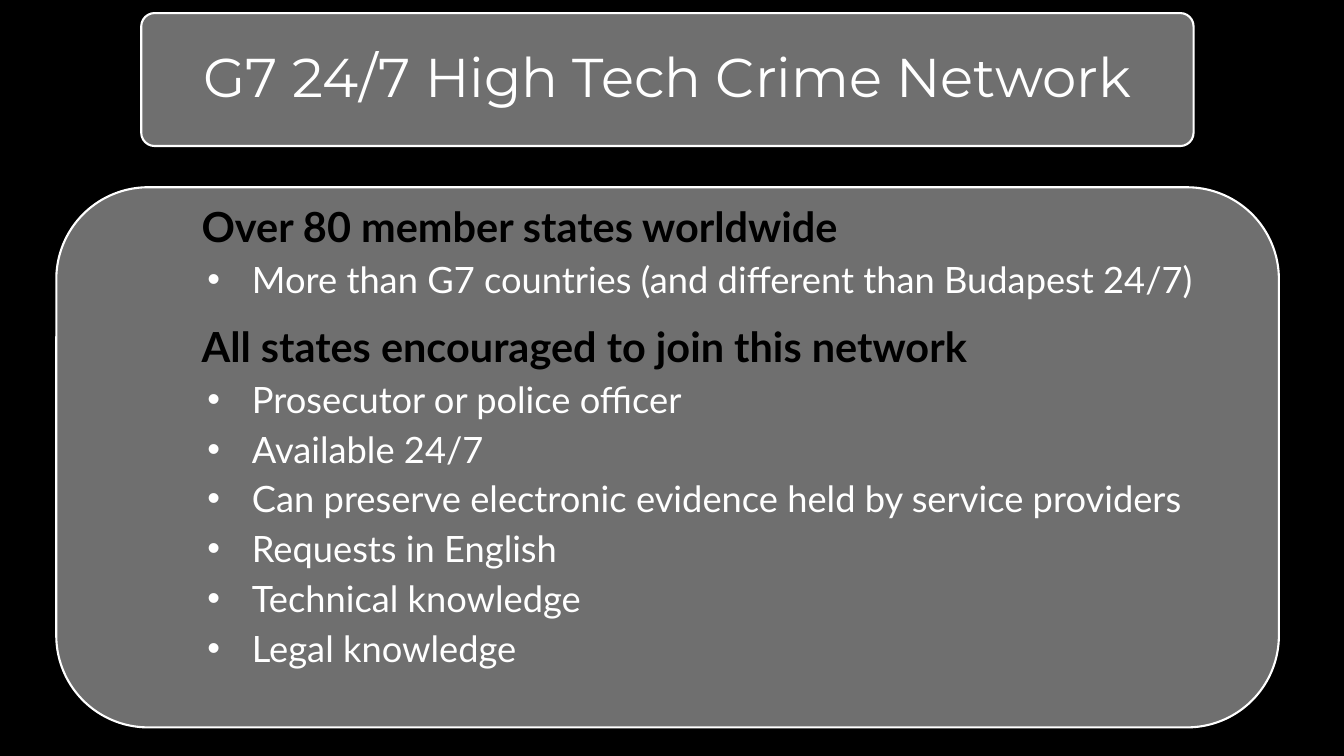
from lxml import etree
from pptx import Presentation
from pptx.dml.color import RGBColor
from pptx.enum.shapes import MSO_SHAPE
from pptx.enum.text import MSO_ANCHOR, PP_ALIGN
from pptx.oxml.ns import qn
from pptx.util import Cm, Pt

ROUNDED = MSO_SHAPE.ROUNDED_RECTANGLE
MIDDLE, TOP = MSO_ANCHOR.MIDDLE, MSO_ANCHOR.TOP
CENTER, LEFT = PP_ALIGN.CENTER, PP_ALIGN.LEFT

COLORS = {"background": "000000", "panel": "6F6F6F",
          "light": "FFFFFF", "heading": "000000"}

SECTIONS = [
    ("Over 80 member states worldwide",
     ["More than G7 countries (and different than Budapest 24/7)"]),
    ("All states encouraged to join this network",
     ["Prosecutor or police officer",
      "Available 24/7",
      "Can preserve electronic evidence held by service providers",
      "Requests in English",
      "Technical knowledge",
      "Legal knowledge"]),
]


def color(name):
    return RGBColor.from_string(COLORS[name])


def add_panel(page, left, top, width, height, corner):
    panel = page.shapes.add_shape(ROUNDED, Cm(left), Cm(top), Cm(width), Cm(height))
    panel.adjustments[0] = corner
    panel.shadow.inherit = False
    panel.fill.solid()
    panel.fill.fore_color.rgb = color("panel")
    panel.line.color.rgb = color("light")
    panel.line.width = Pt(1.5)
    return panel


def set_frame(box, anchor, side_margin):
    frame = box.text_frame
    frame.word_wrap = True
    frame.vertical_anchor = anchor
    frame.margin_left = frame.margin_right = Cm(side_margin)
    frame.margin_top = frame.margin_bottom = Cm(0.13)
    return frame


def write(para, text, *, font, size, tint, bold=False, align=LEFT, spacing=1.0, before=0):
    para.alignment = align
    para.line_spacing = spacing
    para.space_before = Pt(before)
    span = para.add_run()
    span.text = text
    span.font.name = font
    span.font.size = Pt(size)
    span.font.bold = bold
    span.font.color.rgb = color(tint)


def indent(para, left, hanging=0, bullet=None):
    """Set the left margin and, if given, a hanging bullet."""
    props = para._p.get_or_add_pPr()
    props.set("marL", str(Cm(left)))
    props.set("indent", str(-Cm(hanging)))
    if bullet:
        tint = etree.SubElement(props, qn("a:buClr"))
        etree.SubElement(tint, qn("a:srgbClr")).set("val", COLORS["light"])
        etree.SubElement(props, qn("a:buFont")).set("typeface", "Arial")
        etree.SubElement(props, qn("a:buChar")).set("char", bullet)
    else:
        etree.SubElement(props, qn("a:buNone"))


def add_sections(page, left, top, width, height):
    box = page.shapes.add_textbox(Cm(left), Cm(top), Cm(width), Cm(height))
    frame = set_frame(box, TOP, 0)
    para = frame.paragraphs[0]
    for number, (heading, points) in enumerate(SECTIONS):
        if number:
            para = frame.add_paragraph()
        write(para, heading, font="Lato", size=29.6, tint="heading",
              bold=True, spacing=1.08, before=12)
        indent(para, 1.27)
        for point in points:
            para = frame.add_paragraph()
            para.level = 1
            write(para, point, font="Lato", size=25.9, tint="light",
                  spacing=1.08, before=2)
            indent(para, 2.54, hanging=1.12, bullet="•")


def main():
    deck = Presentation()
    deck.slide_width, deck.slide_height = Cm(33.87), Cm(19.05)
    page = deck.slides.add_slide(deck.slide_layouts[6])
    page.background.fill.solid()
    page.background.fill.fore_color.rgb = color("background")

    # Body panel
    add_panel(page, 1.42, 4.72, 30.81, 13.61, 0.17)

    # Title panel
    title = add_panel(page, 3.56, 0.33, 26.52, 3.35, 0.1)
    frame = set_frame(title, MIDDLE, 0.2)
    write(frame.paragraphs[0], "G7 24/7 High Tech Crime Network", font="Montserrat",
          size=39, tint="light", align=CENTER, spacing=0.9)

    # Headings and bullets
    add_sections(page, 3.81, 4.83, 26.97, 12.83)

    deck.save("out.pptx")


if __name__ == "__main__":
    main()
